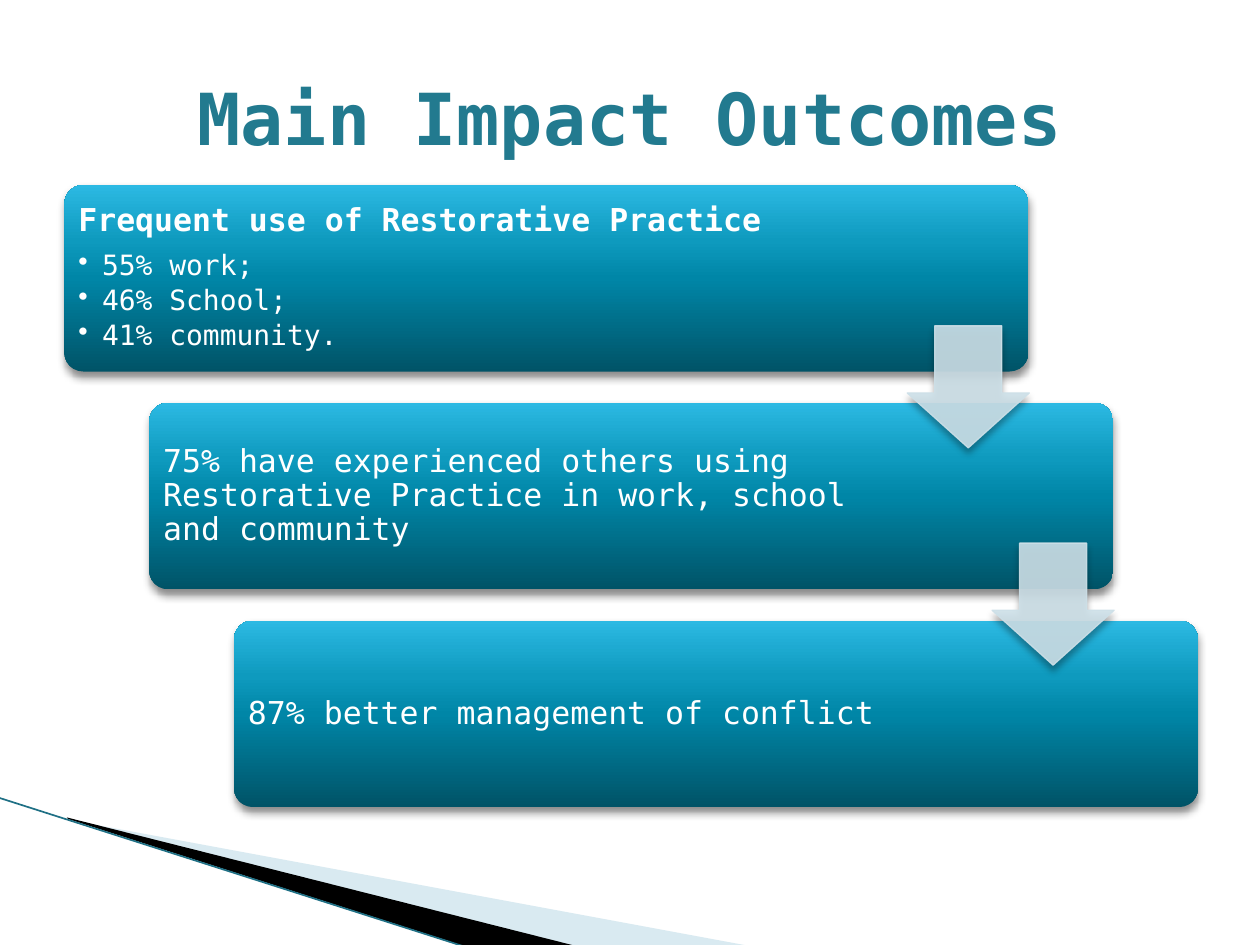
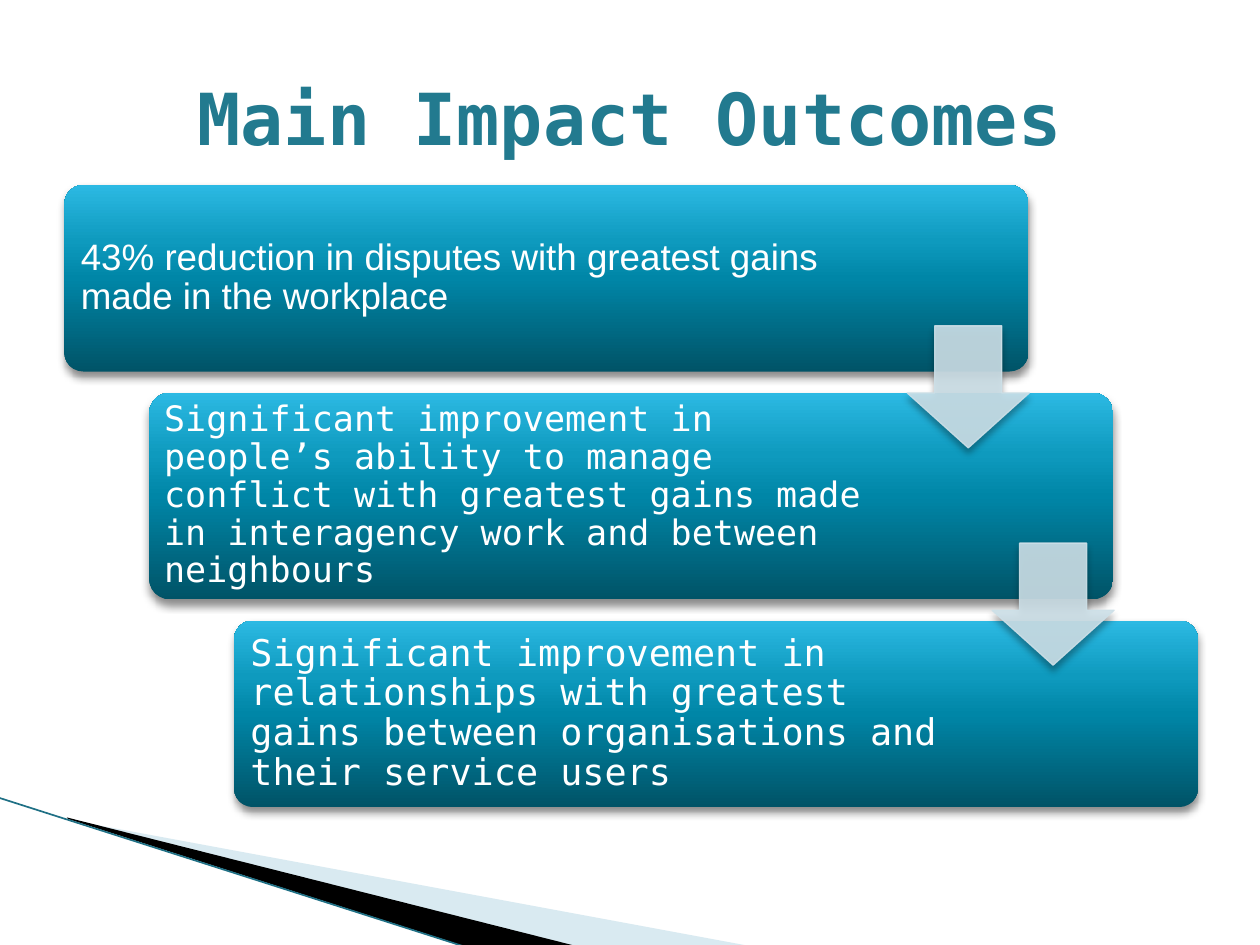
from lxml import etree
from pptx import Presentation
from pptx import util as u
from pptx.dml.color import RGBColor
from pptx.enum import shapes, text
from pptx.oxml import ns

Cm, Pt = u.Cm, u.Pt
MONO = "DejaVu Sans Mono"
HUE = {"title": "227A8F", "white": "FFFFFF", "black": "000000", "pale": "A0CBDC",
       "rule": "1F7085", "arrow": "CDE0E8"}
GRAD = [(0, "005367"), (50, "0086A7"), (70, "0E9ABE"), (100, "2CB9E3")]


def add(root, tag, **atts):
    return etree.SubElement(root, ns.qn("a:" + tag), {k: str(v) for k, v in atts.items()})


def write(slide, rows, x, y, w, h, size=18, font=MONO, color="white", bold=False,
          inset=0.18, align=text.PP_ALIGN.LEFT, space=0.9, after=0.4):
    frame = slide.shapes.add_textbox(Cm(x), Cm(y), Cm(w), Cm(h)).text_frame
    frame.word_wrap = True
    frame.vertical_anchor = text.MSO_ANCHOR.MIDDLE
    frame.margin_left = frame.margin_right = Cm(inset)
    frame.margin_top = frame.margin_bottom = Cm(inset)
    for i, row in enumerate(rows):
        para = frame.paragraphs[0] if i == 0 else frame.add_paragraph()
        para.alignment, para.line_spacing = align, space
        para.space_after = Pt(size * after if i == 0 else 2.8)
        if i:
            props = para._p.get_or_add_pPr()
            props.set("marL", str(Cm(0.48)))
            props.set("indent", str(-Cm(0.48)))
            add(props, "buChar", char="•")
        run = para.add_run()
        run.text = row
        run.font.size = Pt(size if i == 0 else size - 2)
        run.font.name, run.font.bold = font, bold and i == 0
        run.font.color.rgb = RGBColor.from_string(HUE[color])


DECKS = [
    [(["Frequent use of Restorative Practice", "55% work;", "46% School;", "41% community."],
      dict(bold=True)),
     (["75% have experienced others using Restorative Practice in work, school and community"], {}),
     (["87% better management of conflict"], {})],
    [(["43% reduction in disputes with greatest gains made in the workplace"],
      dict(size=21, font="Arial", inset=0.23)),
     (["Significant improvement in people’s ability to manage conflict with greatest gains "
       "made in interagency work and between neighbours"], dict(size=20, inset=0.2)),
     (["Significant improvement in relationships with greatest gains between organisations "
       "and their service users"], dict(size=21, inset=0.23))],
]
SWOOSH = [("pale", 40, [(1.4, 16.53), (15.11, 19.07), (11.58, 19.07), (1.4, 16.51)]),
          ("black", 100, [(1.35, 16.48), (11.61, 19.07), (9.45, 19.1), (1.37, 16.51)])]
LEFT, TOP, WIDE, HIGH = 1.3, 3.73, 19.43, 3.76
STEP, PITCH = 1.71, 4.39

prs = Presentation()
prs.slide_width, prs.slide_height = Cm(25.4), Cm(19.05)

for n, deck in enumerate(DECKS):
    slide = prs.slides.add_slide(prs.slide_layouts[6])

    for hue, alpha, pts in SWOOSH:
        dots = [(Cm(x), Cm(y)) for x, y in pts]
        form = slide.shapes.build_freeform(*dots[0])
        form.add_line_segments(dots[1:], close=True)
        wedge = form.convert_to_shape()
        wedge.shadow.inherit = False
        wedge.fill.solid()
        wedge.fill.fore_color.rgb = RGBColor.from_string(HUE[hue])
        add(wedge._element.spPr.find(".//" + ns.qn("a:srgbClr")), "alpha", val=alpha * 1000)
        wedge.line.fill.background()

    rule = slide.shapes.add_connector(shapes.MSO_CONNECTOR.STRAIGHT,
                                      Cm(-0.03), Cm(16.08), Cm(9.42), Cm(19.1))
    rule.line.color.rgb = RGBColor.from_string(HUE["rule"])
    rule.line.width = Pt(0.95)
    add(rule._element.spPr, "effectLst")

    write(slide, ["Main Impact Outcomes"], 1.27, 0.76, 22.86, 3.18, size=41, color="title",
          bold=True, align=text.PP_ALIGN.CENTER, space=1, after=0)

    cards = []
    for i, (rows, form) in enumerate(deck):
        grow = 0.41 if n == 1 and i == 1 else 0
        x, y, h = LEFT + i * STEP, TOP + i * PITCH - grow / 2, HIGH + grow
        card = slide.shapes.add_shape(shapes.MSO_SHAPE.ROUNDED_RECTANGLE,
                                      Cm(x), Cm(y), Cm(WIDE), Cm(h))
        card.adjustments[0] = 0.1
        card.line.fill.background()
        card.fill.gradient()
        grad = card._element.spPr.find(ns.qn("a:gradFill"))
        stops = grad.find(ns.qn("a:gsLst"))
        for old in list(stops):
            stops.remove(old)
        for pos, hue in GRAD:
            add(add(stops, "gs", pos=pos * 1000), "srgbClr", val=hue)
        grad.find(ns.qn("a:lin")).set("ang", str(270 * 60000))
        cards.append((card, 45, 5, 3))
        write(slide, rows, x + 0.1, y + 0.1, 15.37 if i == 0 else 15.04, h - 0.2, **form)

    for i in range(2):
        arrow = slide.shapes.add_shape(shapes.MSO_SHAPE.DOWN_ARROW, Cm(18.29 + i * STEP),
                                       Cm(6.57 + i * 4.38), Cm(2.46), Cm(2.46))
        arrow.adjustments[0], arrow.adjustments[1] = 0.55, 0.45
        arrow.fill.solid()
        arrow.fill.fore_color.rgb = RGBColor.from_string(HUE["arrow"])
        arrow.line.color.rgb = RGBColor.from_string(HUE["arrow"])
        arrow.line.width = Pt(0.75)
        for tint in arrow._element.spPr.iter(ns.qn("a:srgbClr")):
            add(tint, "alpha", val=90000)
        cards.append((arrow, 35, 4, 3))

    for shape, alpha, blur, dist in cards:
        shape.shadow.inherit = False
        glow = add(shape._element.spPr.find(ns.qn("a:effectLst")), "outerShdw", blurRad=Pt(blur),
                   dist=Pt(dist), dir=90 * 60000, rotWithShape=0)
        add(add(glow, "srgbClr", val=HUE["black"]), "alpha", val=alpha * 1000)

prs.save("out.pptx")
